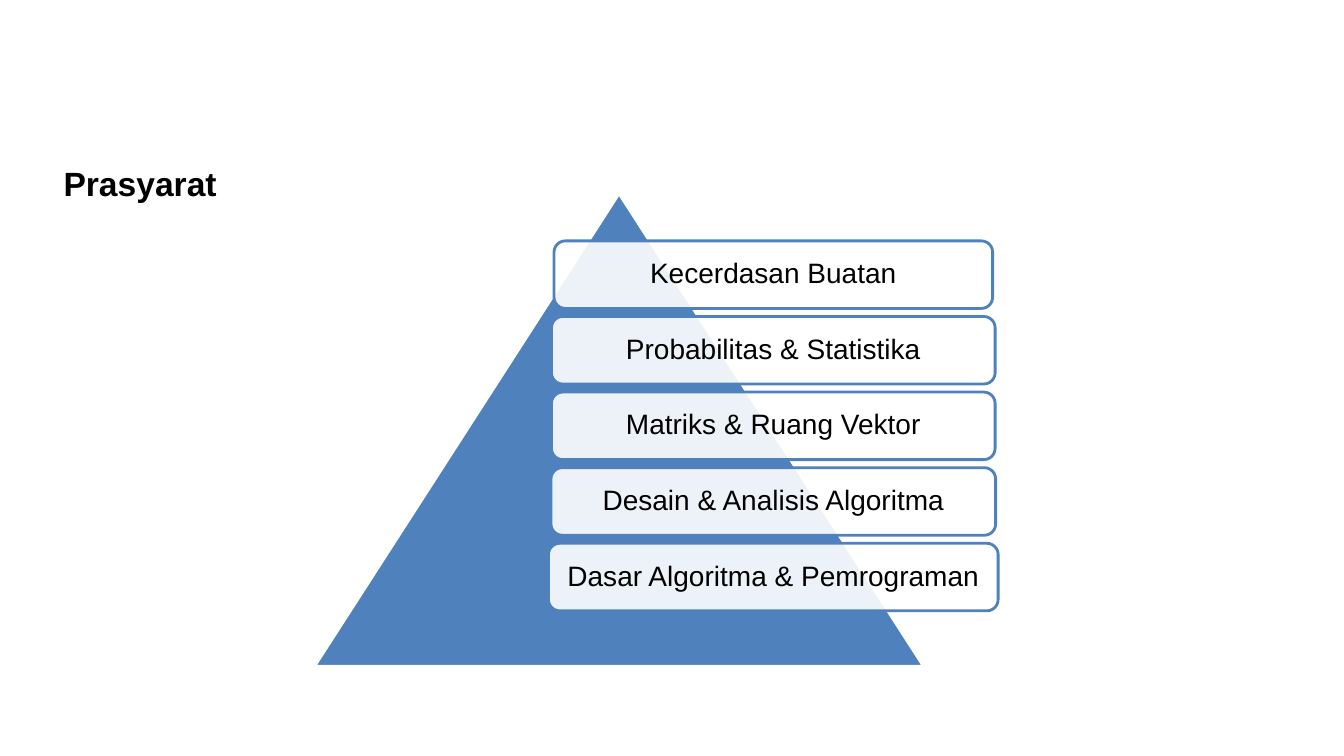
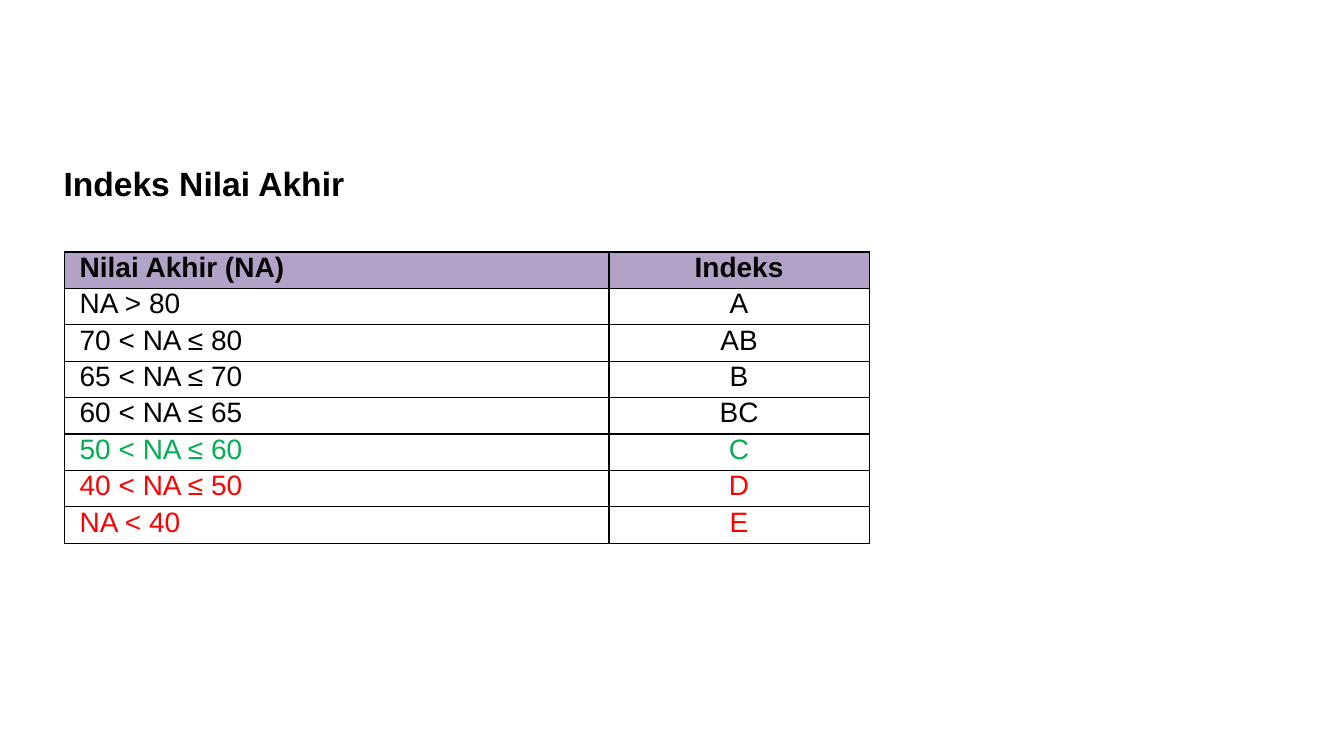
import pptx
import pptx.util
import pptx.dml.color
import pptx.enum.shapes
import pptx.enum.text
import pptx.oxml
import pptx.oxml.ns

FONT = "Arial"
BLACK, WHITE, BLUE = "000000", "FFFFFF", "4F81BD"
LILAC, GREEN, RED = "B3A2C7", "00B050", "FF0000"
TITLE_ONLY = 5
BODY_SIZE = 20

Inches = pptx.util.Inches
ALIGN = pptx.enum.text.PP_ALIGN
MIDDLE = pptx.enum.text.MSO_ANCHOR.MIDDLE
SHAPE = pptx.enum.shapes.MSO_SHAPE

# Prerequisites from the top of the pyramid down, with box widths
PREREQUISITES = [
    ("Kecerdasan Buatan", 4.35),
    ("Probabilitas & Statistika", 4.4),
    ("Matriks & Ruang Vektor", 4.4),
    ("Desain & Analisis Algoritma", 4.41),
    ("Dasar Algoritma & Pemrograman", 4.46),
]

# Score range, grade and text colour
GRADES = [
    ("Nilai Akhir (NA)", "Indeks", BLACK),
    ("NA > 80", "A", BLACK),
    ("70 < NA ≤ 80", "AB", BLACK),
    ("65 < NA ≤ 70", "B", BLACK),
    ("60 < NA ≤ 65", "BC", BLACK),
    ("50 < NA ≤ 60", "C", GREEN),
    ("40 < NA ≤ 50", "D", RED),
    ("NA < 40", "E", RED),
]


def rgb(color):
    return pptx.dml.color.RGBColor.from_string(color)


def paint(target, color):
    target.fill.solid()
    target.fill.fore_color.rgb = rgb(color)


def write(frame, text, size=BODY_SIZE, color=BLACK, bold=False, align=ALIGN.LEFT):
    frame.text = text
    paragraph = frame.paragraphs[0]
    paragraph.alignment = align
    font = paragraph.runs[0].font
    font.name, font.size, font.bold = FONT, pptx.util.Pt(size), bold
    font.color.rgb = rgb(color)


def set_margins(frame, margin):
    frame.margin_left = frame.margin_right = Inches(margin)
    frame.margin_top = frame.margin_bottom = Inches(margin)


def add_titled_slide(deck, heading):
    slide = deck.slides.add_slide(deck.slide_layouts[TITLE_ONLY])
    title = slide.shapes.title
    title.left, title.top = Inches(0.53), Inches(1.47)
    title.width, title.height = Inches(12.14), Inches(0.7)
    write(title.text_frame, heading, size=24, bold=True)
    title.text_frame.vertical_anchor = MIDDLE
    set_margins(title.text_frame, 0.1)
    return slide


def add_outlined(slide, kind, left, top, width, height, fill, outline):
    shape = slide.shapes.add_shape(
        kind, Inches(left), Inches(top), Inches(width), Inches(height))
    shape.shadow.inherit = False
    paint(shape, fill)
    shape.line.color.rgb = rgb(outline)
    shape.line.width = pptx.util.Pt(2)
    return shape


def set_opacity(shape, percent):
    color = shape.element.spPr.find(
        "a:solidFill/a:srgbClr", pptx.oxml.ns.namespaces("a"))
    color.append(pptx.oxml.parse_xml(
        f'<a:alpha {pptx.oxml.ns.nsdecls("a")} val="{percent * 1000}"/>'))


def add_prerequisite(slide, label, center, top, width):
    box = add_outlined(slide, SHAPE.ROUNDED_RECTANGLE, center - width / 2, top,
                       width, 0.67, WHITE, BLUE)
    set_opacity(box, 90)
    frame = box.text_frame
    write(frame, label, align=ALIGN.CENTER)
    frame.paragraphs[0].line_spacing = 0.9
    frame.word_wrap = True
    frame.vertical_anchor = MIDDLE
    set_margins(frame, 0.08)


def add_borders(cell, color, points):
    properties = cell._tc.get_or_add_tcPr()
    for index, side in enumerate(("lnL", "lnR", "lnT", "lnB")):
        properties.insert(index, pptx.oxml.parse_xml(
            f'<a:{side} {pptx.oxml.ns.nsdecls("a")} w="{pptx.util.Pt(points)}">'
            f'<a:solidFill><a:srgbClr val="{color}"/></a:solidFill></a:{side}>'))


def fill_cell(cell, text, color, header, align, indent):
    write(cell.text_frame, text, color=color, bold=header, align=align)
    cell.margin_left, cell.margin_right = Inches(indent), Inches(0.07)
    cell.margin_top = cell.margin_bottom = 0
    if header:
        paint(cell, LILAC)
    else:
        cell.fill.background()
    add_borders(cell, BLACK, 1)


def add_grade_table(slide, left, top, widths, height):
    # Rows share the table height equally
    table = slide.shapes.add_table(
        len(GRADES), len(widths), Inches(left), Inches(top),
        Inches(sum(widths)), Inches(height)).table
    table.first_row = table.horz_banding = False
    for column, width in zip(table.columns, widths):
        column.width = Inches(width)
    for row, (score, grade, color) in enumerate(GRADES):
        header = row == 0
        fill_cell(table.cell(row, 0), score, color, header, ALIGN.LEFT, 0.15)
        fill_cell(table.cell(row, 1), grade, color, header, ALIGN.CENTER, 0.07)


def main():
    deck = pptx.Presentation()
    deck.slide_width, deck.slide_height = Inches(13.33), Inches(7.5)

    # Prerequisite pyramid
    slide = add_titled_slide(deck, "Prasyarat")
    add_outlined(slide, SHAPE.ISOSCELES_TRIANGLE, 3.12, 1.92, 6.04, 4.69, BLUE, WHITE)
    for level, (course, width) in enumerate(PREREQUISITES):
        add_prerequisite(slide, course, 7.67, 2.39 + 0.75 * level, width)

    # Final grade index
    slide = add_titled_slide(deck, "Indeks Nilai Akhir")
    add_grade_table(slide, 0.64, 2.5, (5.4, 2.58), 2.89)

    deck.save("out.pptx")


if __name__ == "__main__":
    main()
